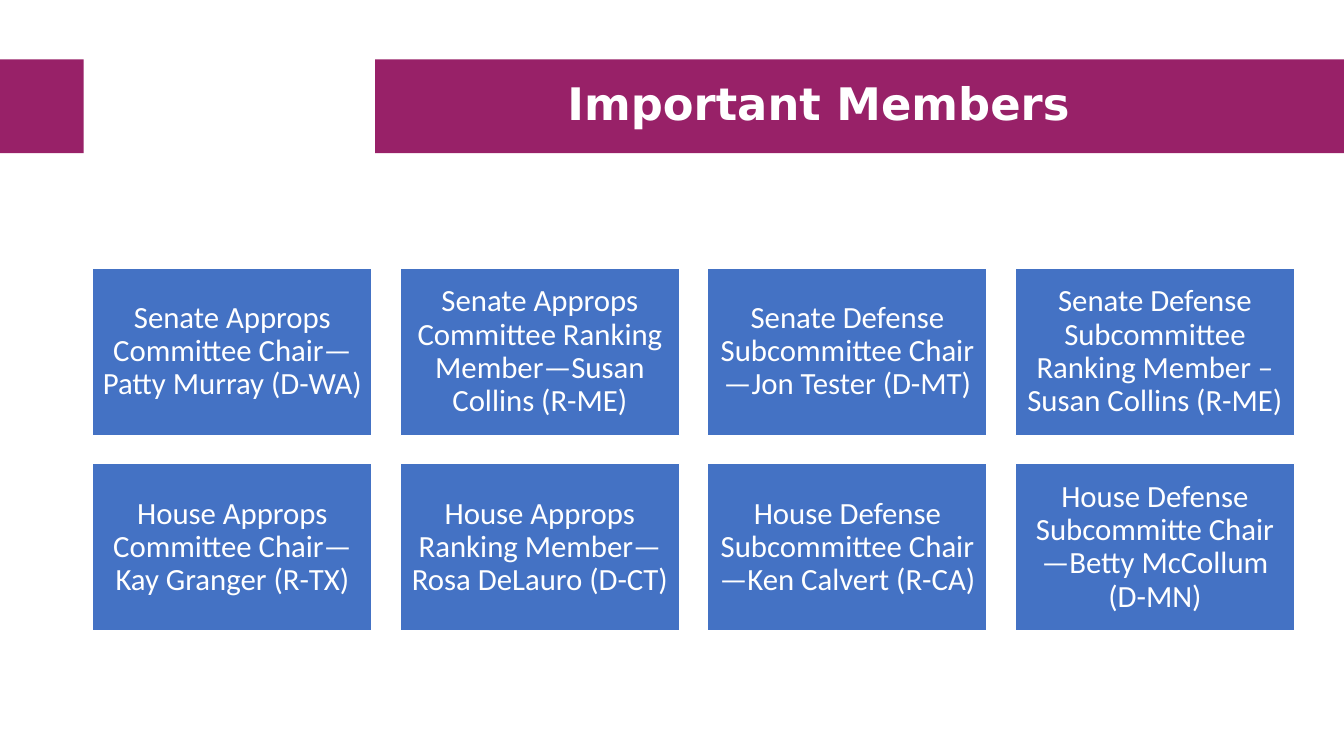
import pptx
import pptx.util
import pptx.dml.color
import pptx.enum.shapes
import pptx.enum.text

Inches = pptx.util.Inches

THEME = {
    "band": "982168",
    "card": "4472C4",
    "light": "FFFFFF",
    "title": {"name": "DejaVu Sans", "size": pptx.util.Pt(32), "bold": True},
    "body": {"name": "Calibri", "size": pptx.util.Pt(22), "bold": False},
}

MEMBERS = [
    [
        "Senate Approps Committee Chair—Patty Murray (D-WA)",
        "Senate Approps Committee Ranking Member—Susan Collins (R-ME)",
        "Senate Defense Subcommittee Chair—Jon Tester (D-MT)",
        "Senate Defense Subcommittee Ranking Member –Susan Collins (R-ME)",
    ],
    [
        "House Approps Committee Chair—Kay Granger (R-TX)",
        "House Approps Ranking Member—Rosa DeLauro (D-CT)",
        "House Defense Subcommittee Chair—Ken Calvert (R-CA)",
        "House Defense Subcommitte Chair—Betty McCollum (D-MN)",
    ],
]


def color(name):
    return pptx.dml.color.RGBColor.from_string(THEME[name])


def add_rectangle(slide, box, fill, line=None):
    shape = slide.shapes.add_shape(
        pptx.enum.shapes.MSO_SHAPE.RECTANGLE, *map(Inches, box))
    shape.shadow.inherit = False
    shape.fill.solid()
    shape.fill.fore_color.rgb = color(fill)
    if line:
        shape.line.color.rgb = color(line)
        shape.line.width = pptx.util.Pt(1)
    else:
        shape.line.fill.background()
    return shape


def write_text(shape, text, style, inset):
    frame = shape.text_frame
    frame_format = {
        "word_wrap": True,
        "vertical_anchor": pptx.enum.text.MSO_ANCHOR.MIDDLE,
    }
    for side in ("left", "top", "right", "bottom"):
        frame_format["margin_" + side] = Inches(inset)
    for key, value in frame_format.items():
        setattr(frame, key, value)
    paragraph = frame.paragraphs[0]
    paragraph.text = text
    paragraph.alignment = pptx.enum.text.PP_ALIGN.CENTER
    paragraph.line_spacing = 0.9
    for key, value in THEME[style].items():
        setattr(paragraph.font, key, value)
    paragraph.font.color.rgb = color("light")


def add_header(slide, box, title):
    left, top, width, height = box
    # Band in two parts, with a gap between them
    gap_start, gap_end = 0.83, 3.72
    add_rectangle(slide, (left + gap_end, top, width - gap_end, height), "band")
    add_rectangle(slide, (left, top, gap_start, height), "band")
    # Title
    title_box = (left + gap_end + 0.2, top + 0.09, 8.4, 0.75)
    text_box = slide.shapes.add_textbox(*map(Inches, title_box))
    write_text(text_box, title, "title", 0.05)


def add_member_grid(slide, box, rows, gap):
    left, top, width, height = box
    columns = len(rows[0])
    card_width = (width - gap * (columns - 1)) / columns
    card_height = (height - gap * (len(rows) - 1)) / len(rows)
    for row, members in enumerate(rows):
        for column, member in enumerate(members):
            card_box = (left + column * (card_width + gap),
                        top + row * (card_height + gap),
                        card_width, card_height)
            card = add_rectangle(slide, card_box, "card", "light")
            write_text(card, member, "body", 0.09)


def main():
    presentation = pptx.Presentation()
    presentation.slide_width = Inches(13.33)
    presentation.slide_height = Inches(7.5)
    slide = presentation.slides.add_slide(presentation.slide_layouts[6])
    add_header(slide, (0, 0.59, 13.33, 0.93), "Important Members")
    add_member_grid(slide, (0.92, 2.66, 11.92, 3.6), MEMBERS, 0.28)
    presentation.save("out.pptx")


if __name__ == "__main__":
    main()
